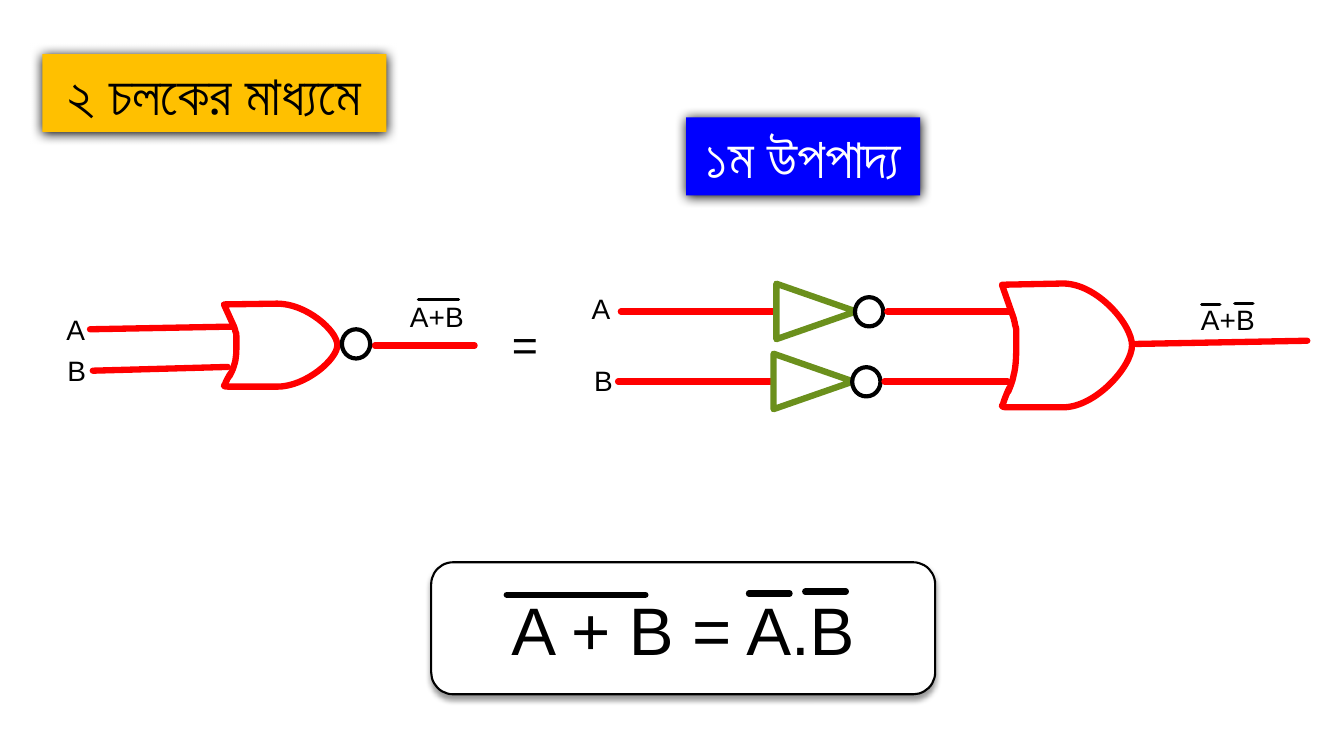
import pptx
import pptx.util
import pptx.dml.color
import pptx.enum.shapes
import pptx.enum.text
import pptx.oxml
import pptx.oxml.ns
import lxml.etree

Pt = pptx.util.Pt
SHAPE = pptx.enum.shapes.MSO_SHAPE
ALIGN = pptx.enum.text.PP_ALIGN
ANCHOR = pptx.enum.text.MSO_ANCHOR
FIT = pptx.enum.text.MSO_AUTO_SIZE
qn = pptx.oxml.ns.qn

COLORS = {
    "ink": "000000",
    "paper": "FFFFFF",
    "wire": "FF0000",
    "inverter": "6B901C",
    "topic": "FFC000",
    "theorem": "0000FF",
}

GATE_START = (0, 0.01)
GATE_SEGMENTS = [
    [(0.47, 0)],
    [(0.73, 0), (1, 0.33), (1, 0.5)],
    [(1, 0.67), (0.72, 1), (0.47, 1)],
    [(0.05, 1)],
    [(-0.03, 1), (0.01, 0.98), (0.01, 0.97)],
    [(0.01, 0.96), (0.05, 0.85), (0.06, 0.84)],
    [(0.07, 0.83), (0.03, 0.9), (0.05, 0.87)],
    [(0.06, 0.84), (0.08, 0.8), (0.09, 0.74)],
    [(0.11, 0.67), (0.11, 0.55), (0.11, 0.5)],
    [(0.11, 0.44), (0.11, 0.42), (0.11, 0.4)],
    [(0.11, 0.37), (0.11, 0.35), (0.1, 0.33)],
    [(0.1, 0.31), (0.1, 0.33), (0.09, 0.28)],
    [GATE_START],
]


def rgb(name):
    return pptx.dml.color.RGBColor.from_string(COLORS[name])


def style_line(line, color, weight):
    line.color.rgb = rgb(color)
    line.width = Pt(weight)


def style_shape(shape, fill=None, line=None, weight=4.5):
    shape.shadow.inherit = False
    if fill:
        shape.fill.solid()
        shape.fill.fore_color.rgb = rgb(fill)
    else:
        shape.fill.background()
    if line:
        style_line(shape.line, line, weight)
    else:
        shape.line.fill.background()


def add_shadow(shape, opacity, blur, distance):
    effects = shape._element.spPr.find(qn("a:effectLst"))
    shadow = lxml.etree.SubElement(
        effects, qn("a:outerShdw"), blurRad=str(Pt(blur)), dist=str(Pt(distance)),
        dir="5400000", algn="t", rotWithShape="0")
    tone = lxml.etree.SubElement(shadow, qn("a:srgbClr"), val=COLORS["ink"])
    lxml.etree.SubElement(tone, qn("a:alpha"), val=str(opacity * 1000))


def write(frame, words, size, color="ink", face="Arial", align=ALIGN.LEFT):
    paragraph = frame.paragraphs[0]
    paragraph.text = words
    paragraph.alignment = align
    font = paragraph.font
    font.size = Pt(size)
    font.color.rgb = rgb(color)
    font.name = face
    lxml.etree.SubElement(font._rPr, qn("a:cs"), typeface=face)


def add_label(slide, words, x, y, width=28, height=31.7, size=20):
    label = slide.shapes.add_textbox(Pt(x), Pt(y), Pt(width), Pt(height))
    label.text_frame.word_wrap = False
    label.text_frame.auto_size = FIT.SHAPE_TO_FIT_TEXT
    write(label.text_frame, words, size)


def add_stroke(slide, x1, y1, x2, y2, color="wire", weight=4.5):
    stroke = slide.shapes.add_connector(
        pptx.enum.shapes.MSO_CONNECTOR.STRAIGHT, Pt(x1), Pt(y1), Pt(x2), Pt(y2))
    style_line(stroke.line, color, weight)
    stroke.line._ln.set("cap", "rnd")
    lxml.etree.SubElement(stroke._element.spPr, qn("a:effectLst"))


def add_overbar(slide, x, y, length, weight=2.25):
    add_stroke(slide, x, y, x + length, y, "ink", weight)


def add_bubble(slide, x, y):
    bubble = slide.shapes.add_shape(SHAPE.OVAL, Pt(x), Pt(y), Pt(20.2), Pt(20.9))
    style_shape(bubble, "paper", "ink", 3)


def add_or_gate(slide, x, y, width, height):
    def place(point):
        return Pt(x + point[0] * width), Pt(y + point[1] * height)

    builder = slide.shapes.build_freeform(*place(GATE_START))
    builder.add_line_segments([place(segment[-1]) for segment in GATE_SEGMENTS], close=True)
    gate = builder.convert_to_shape()
    sides = list(gate._element.iter(qn("a:lnTo")))
    for side, segment in zip(sides, GATE_SEGMENTS):
        if len(segment) == 3:
            curve = lxml.etree.Element(qn("a:cubicBezTo"))
            for across, down in segment:
                lxml.etree.SubElement(
                    curve, qn("a:pt"), x=str(Pt(across * width)), y=str(Pt(down * height)))
            side.getparent().replace(side, curve)
    style_shape(gate, line="wire")
    gate.line._ln.set("cap", "rnd")
    lxml.etree.SubElement(gate.line._ln, qn("a:round"))


def add_banner(slide, words, x, y, width, fill, color):
    banner = slide.shapes.add_shape(SHAPE.RECTANGLE, Pt(x), Pt(y), Pt(width), Pt(55.7))
    style_shape(banner, fill)
    add_shadow(banner, 100, 8.5, 1)
    banner.text_frame.word_wrap = True
    banner.text_frame.auto_size = FIT.SHAPE_TO_FIT_TEXT
    banner.text_frame.vertical_anchor = ANCHOR.TOP
    write(banner.text_frame, words, 40, color, "Roboto", ALIGN.CENTER)


def add_formula(slide, x, y, width, height):
    formula = slide.shapes.add_shape(
        SHAPE.FLOWCHART_ALTERNATE_PROCESS, Pt(x), Pt(y), Pt(width), Pt(height))
    style_shape(formula, "paper", "ink", 1.5)
    add_shadow(formula, 40, 4, 3)
    formula.text_frame.word_wrap = True
    formula.text_frame.vertical_anchor = ANCHOR.MIDDLE
    write(formula.text_frame, "A + B = A.B", 48, align=ALIGN.CENTER)
    for dx, dy, length in ((54, 23.3, 99), (227, 22.3, 29), (267.2, 21, 29)):
        add_overbar(slide, x + dx, y + dy, length, 4.5)


def add_nor_circuit(slide, x, y):
    add_stroke(slide, x + 24.3, y + 25.2, x + 125.6, y + 23.3)
    add_stroke(slide, x + 26.3, y + 54.8, x + 122.7, y + 52.1)
    add_label(slide, "A", x + 0.3, y + 9.6)
    add_label(slide, "B", x + 1, y + 39.1)
    add_stroke(slide, x + 227.8, y + 36.7, x + 299, y + 36.7)
    add_or_gate(slide, x + 120, y + 6.9, 81, 59.3)
    add_bubble(slide, x + 204.2, y + 25.2)
    add_label(slide, "A+B", x + 245.8, y + 0.2, 53.3)
    add_overbar(slide, x + 258.8, y + 3.8, 28.8)


def add_inverter_row(slide, x, y):
    add_stroke(slide, x, y, x + 109.5, y)
    triangle = slide.shapes.add_shape(
        SHAPE.FLOWCHART_MERGE, Pt(x + 119.7), Pt(y - 28.5), Pt(39.6), Pt(56.9))
    triangle.rotation = 270
    style_shape(triangle, line="inverter")
    add_bubble(slide, x + 167.2, y - 10.2)
    add_stroke(slide, x + 190.3, y, x + 278.2, y)


def add_inverted_inputs_circuit(slide, x, y):
    add_label(slide, "A", x + 0.6, y + 11.5)
    add_label(slide, "B", x + 2.4, y + 62.8)
    for row in range(2):
        add_inverter_row(slide, x + 28.5 - 2 * row, y + 29.5 + 50 * row)
    add_or_gate(slide, x + 300.7, y + 9.5, 92.9, 88.4)
    add_stroke(slide, x + 396.4, y + 52.7, x + 518.8, y + 50.4)
    add_label(slide, "A+B", x + 435.8, y + 19.4, 53.3)
    add_overbar(slide, x + 443.4, y + 24.4, 13)
    add_overbar(slide, x + 467, y + 23.7, 13)


def main():
    deck = pptx.Presentation()
    deck.slide_width = Pt(960)
    deck.slide_height = Pt(540)
    slide = deck.slides.add_slide(deck.slide_layouts[6])
    add_formula(slide, 308, 401.6, 360, 94.3)
    add_banner(slide, "২ চলকের মাধ্যমে", 30.2, 38.6, 245.8, "topic", "ink")
    add_nor_circuit(slide, 40, 210)
    add_label(slide, "=", 358.6, 222.5, 33, 46, 32)
    add_inverted_inputs_circuit(slide, 415, 193)
    add_banner(slide, "১ম উপপাদ্য", 490.1, 83.9, 167.2, "theorem", "paper")
    deck.save("out.pptx")


if __name__ == "__main__":
    main()
